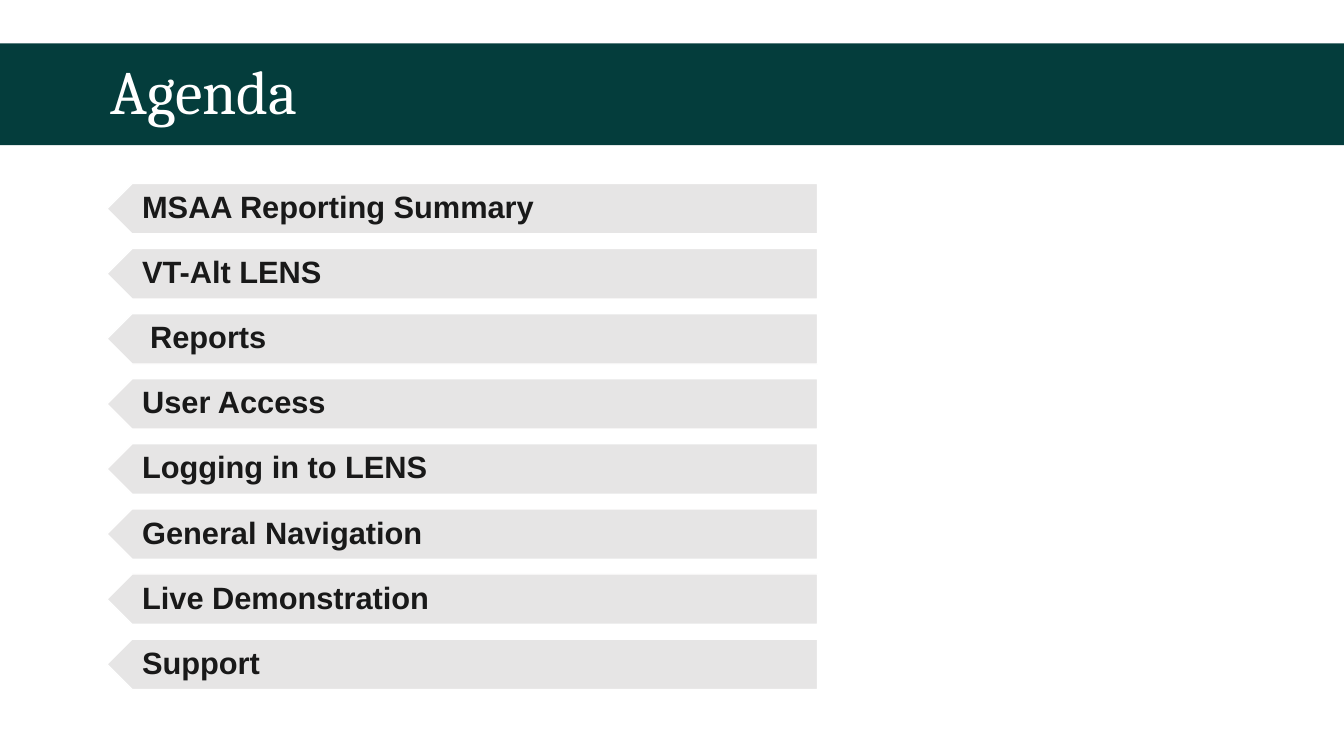
from pptx import Presentation
from pptx.dml.color import RGBColor
from pptx.enum.shapes import MSO_SHAPE
from pptx.enum.text import MSO_ANCHOR, MSO_AUTO_SIZE, PP_ALIGN
from pptx.util import Inches, Pt

TOPICS = [
    "MSAA Reporting Summary",
    "VT-Alt LENS",
    "Reports",
    "User Access",
    "Logging in to LENS",
    "General Navigation",
    "Live Demonstration",
    "Support",
]
INDENTS = {"Reports": 0.3}


def color(hex_code):
    return RGBColor.from_string(hex_code)


class AgendaSlide:
    band, plate, ink, white = "043D3C", "E6E5E5", "191919", "FFFFFF"
    heading_font, body_font = "Cambria", "Arial"

    def __init__(self, prs):
        self.slide = prs.slides.add_slide(prs.slide_layouts[5])
        self.width = prs.slide_width

    def set_line(self, shape, text, font_name, size, hex_code, inset, bold=False):
        """Put one left-aligned, vertically centred line in the shape."""
        frame = shape.text_frame
        frame.text = text
        frame.word_wrap = True
        frame.auto_size = MSO_AUTO_SIZE.NONE
        frame.vertical_anchor = MSO_ANCHOR.MIDDLE
        frame.margin_left = Inches(inset)
        line = frame.paragraphs[0]
        line.alignment = PP_ALIGN.LEFT
        line.line_spacing = 0.9
        font = line.runs[0].font
        font.name, font.size, font.bold = font_name, Pt(size), bold
        font.color.rgb = color(hex_code)

    def add_title(self, text):
        title = self.slide.shapes.title
        title.left, title.top = 0, Inches(0.43)
        title.width, title.height = self.width, Inches(1.01)
        title.fill.solid()
        title.fill.fore_color.rgb = color(self.band)
        self.set_line(title, text, self.heading_font, 44, self.white, 1.1)

    def add_topic(self, group, topic, top):
        """Add a left-pointing plate with its label on top."""
        height = Inches(0.5)
        plate = group.shapes.add_shape(
            MSO_SHAPE.PENTAGON, Inches(1.06), top, Inches(7.05), height)
        plate.rotation = 180
        plate.shadow.inherit = False
        plate.fill.solid()
        plate.fill.fore_color.rgb = color(self.plate)
        plate.line.color.rgb = color(self.white)
        plate.line.width = Pt(1)
        label = group.shapes.add_textbox(Inches(1.19), top, Inches(6.93), height)
        self.set_line(label, topic, self.body_font, 22, self.ink,
                      INDENTS.get(topic, 0.22), bold=True)

    def add_topics(self, topics, first_top, last_top):
        group = self.slide.shapes.add_group_shape()
        step = (last_top - first_top) / (len(topics) - 1)
        for row, topic in enumerate(topics):
            self.add_topic(group, topic, Inches(first_top + row * step))


def main():
    prs = Presentation()
    prs.slide_width, prs.slide_height = Inches(13.33), Inches(7.5)
    agenda = AgendaSlide(prs)
    agenda.add_title("Agenda")
    agenda.add_topics(TOPICS, 1.82, 6.34)
    prs.save("out.pptx")


if __name__ == "__main__":
    main()
